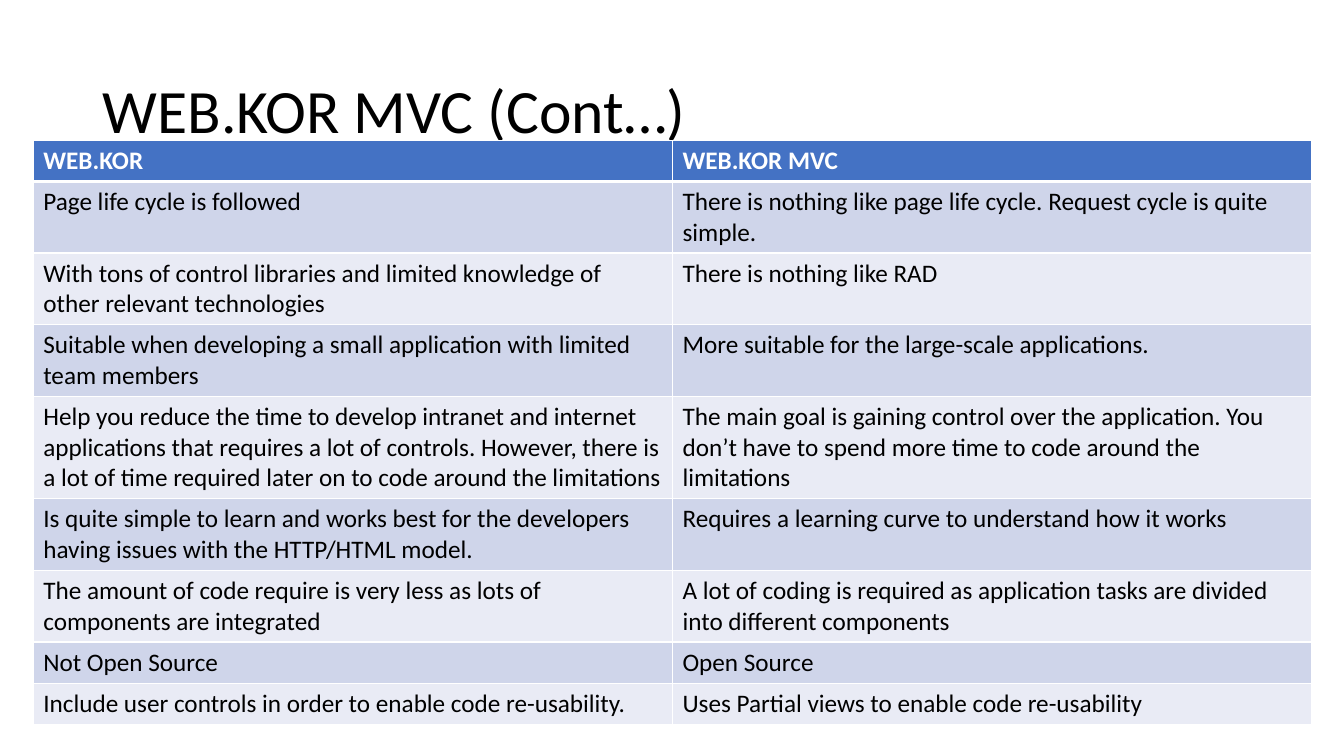
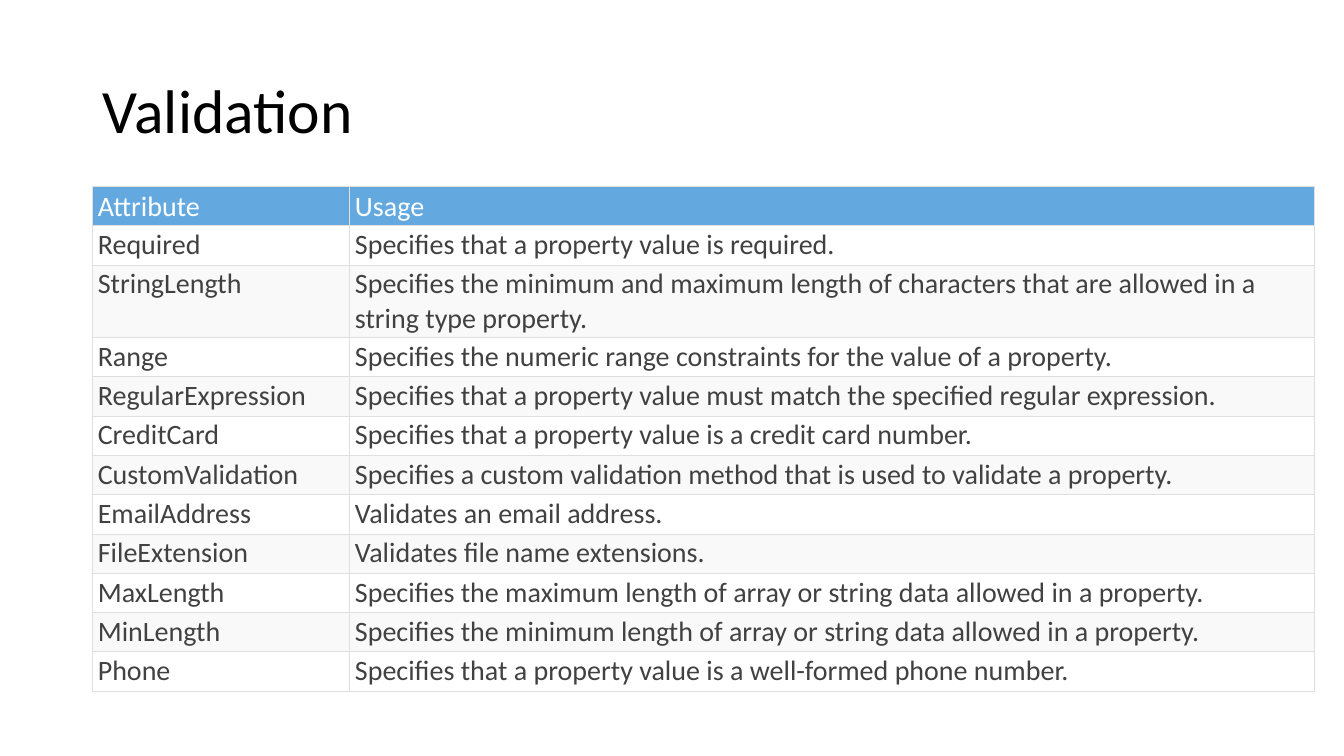
from lxml.etree import SubElement
from pptx import Presentation
from pptx.dml.color import RGBColor
from pptx.enum.text import MSO_ANCHOR, MSO_AUTO_SIZE, PP_ALIGN
from pptx.oxml.ns import qn
from pptx.util import Inches, Pt

FONT = "Calibri"
COLORS = {
    "black": "000000", "white": "FFFFFF", "text": "414141",
    "blue": "4472C4", "band_dark": "CFD5EA", "band_light": "E9EBF5",
    "sky": "63A9E0", "band_gray": "F9F9F9", "rule": "DFDFDF",
}

COMPARISON_STYLE = {
    "size": 18, "bold_header": True, "header": "blue", "body_text": "black",
    "bands": ("band_dark", "band_light"), "border": "white",
    "border_pt": 1, "header_rule_pt": 3, "row_height": 0.41,
    "margins": (0.1, 0.05), "header_anchor": MSO_ANCHOR.TOP,
}
ATTRIBUTE_STYLE = {
    "size": 20, "bold_header": False, "header": "sky", "body_text": "text",
    "bands": ("white", "band_gray"), "border": "rule",
    "border_pt": 0.75, "header_rule_pt": 0.75, "row_height": 0.39,
    "margins": (0.05, 0.02), "header_anchor": MSO_ANCHOR.BOTTOM,
}

COMPARISON = [
    ("WEB.KOR", "WEB.KOR MVC"),
    ("Page life cycle is followed",
     "There is nothing like page life cycle. Request cycle is quite simple."),
    ("With tons of control libraries and limited knowledge of other relevant technologies",
     "There is nothing like RAD"),
    ("Suitable when developing a small application with limited team members",
     "More suitable for the large-scale applications."),
    ("Help you reduce the time to develop intranet and internet applications that "
     "requires a lot of controls. However, there is a lot of time required later on "
     "to code around the limitations",
     "The main goal is gaining control over the application. You don’t have to spend "
     "more time to code around the limitations"),
    ("Is quite simple to learn and works best for the developers having issues with "
     "the HTTP/HTML model.",
     "Requires a learning curve to understand how it works"),
    ("The amount of code require is very less as lots of components are integrated",
     "A lot of coding is required as application tasks are divided into different components"),
    ("Not Open Source", "Open Source"),
    ("Include user controls in order to enable code re-usability.",
     "Uses Partial views to enable code re-usability"),
]
ATTRIBUTES = [
    ("Attribute", "Usage"),
    ("Required", "Specifies that a property value is required."),
    ("StringLength", "Specifies the minimum and maximum length of characters that "
                     "are allowed in a string type property."),
    ("Range", "Specifies the numeric range constraints for the value of a property."),
    ("RegularExpression",
     "Specifies that a property value must match the specified regular expression."),
    ("CreditCard", "Specifies that a property value is a credit card number."),
    ("CustomValidation",
     "Specifies a custom validation method that is used to validate a property."),
    ("EmailAddress", "Validates an email address."),
    ("FileExtension", "Validates file name extensions."),
    ("MaxLength",
     "Specifies the maximum length of array or string data allowed in a property."),
    ("MinLength",
     "Specifies the minimum length of array or string data allowed in a property."),
    ("Phone", "Specifies that a property value is a well-formed phone number."),
]


def rgb(name):
    return RGBColor.from_string(COLORS[name])


def add_run(p, text, size, color, bold=False):
    r = p.add_run()
    r.text = text
    r.font.name = FONT
    r.font.size = Pt(size)
    r.font.bold = bold
    r.font.color.rgb = rgb(color)


def add_titled_slide(prs, title):
    s = prs.slides.add_slide(prs.slide_layouts[5])
    sp = s.shapes.title
    sp.left, sp.top = Inches(0.92), Inches(0.4)
    sp.width, sp.height = Inches(11.5), Inches(1.45)
    tf = sp.text_frame
    tf.word_wrap = True
    tf.auto_size = MSO_AUTO_SIZE.NONE
    tf.vertical_anchor = MSO_ANCHOR.MIDDLE
    p = tf.paragraphs[0]
    p.alignment = PP_ALIGN.LEFT
    p.line_spacing = 0.9
    add_run(p, title, 44, "black")
    return s


def set_borders(cell, color, widths):
    """Draw the left, right, top and bottom borders; widths are in points."""
    tcPr = cell._tc.get_or_add_tcPr()
    for side, width in zip("LRTB", widths):
        ln = SubElement(tcPr, qn(f"a:ln{side}"), w=str(Pt(width)))
        fill = SubElement(ln, qn("a:solidFill"))
        SubElement(fill, qn("a:srgbClr"), val=COLORS[color])


def fill_cell(cell, text, row, style):
    header = row == 0
    thin, thick = style["border_pt"], style["header_rule_pt"]
    set_borders(cell, style["border"],
                (thin, thin, thick if row == 1 else thin, thick if header else thin))
    cell.fill.solid()
    fill = style["header"] if header else style["bands"][(row - 1) % 2]
    cell.fill.fore_color.rgb = rgb(fill)
    side, end = map(Inches, style["margins"])
    cell.margin_left = cell.margin_right = side
    cell.margin_top = cell.margin_bottom = end
    cell.vertical_anchor = style["header_anchor"] if header else MSO_ANCHOR.TOP
    add_run(cell.text_frame.paragraphs[0], text, style["size"],
            "white" if header else style["body_text"],
            header and style["bold_header"])


def add_text_table(s, left, top, col_widths, rows, style):
    height = style["row_height"] * len(rows)
    table = s.shapes.add_table(len(rows), len(col_widths), Inches(left), Inches(top),
                               Inches(sum(col_widths)), Inches(height)).table
    for col, width in zip(table.columns, col_widths):
        col.width = Inches(width)
    for i, texts in enumerate(rows):
        table.rows[i].height = Inches(style["row_height"])
        for j, text in enumerate(texts):
            fill_cell(table.cell(i, j), text, i, style)


def main():
    prs = Presentation()
    prs.slide_width, prs.slide_height = Inches(13.33), Inches(7.5)
    s = add_titled_slide(prs, "WEB.KOR MVC (Cont…)")
    add_text_table(s, 0.33, 1.39, (6.34, 6.34), COMPARISON, COMPARISON_STYLE)
    s = add_titled_slide(prs, "Validation")
    add_text_table(s, 0.92, 1.85, (2.55, 9.57), ATTRIBUTES, ATTRIBUTE_STYLE)
    prs.save("out.pptx")


if __name__ == "__main__":
    main()
